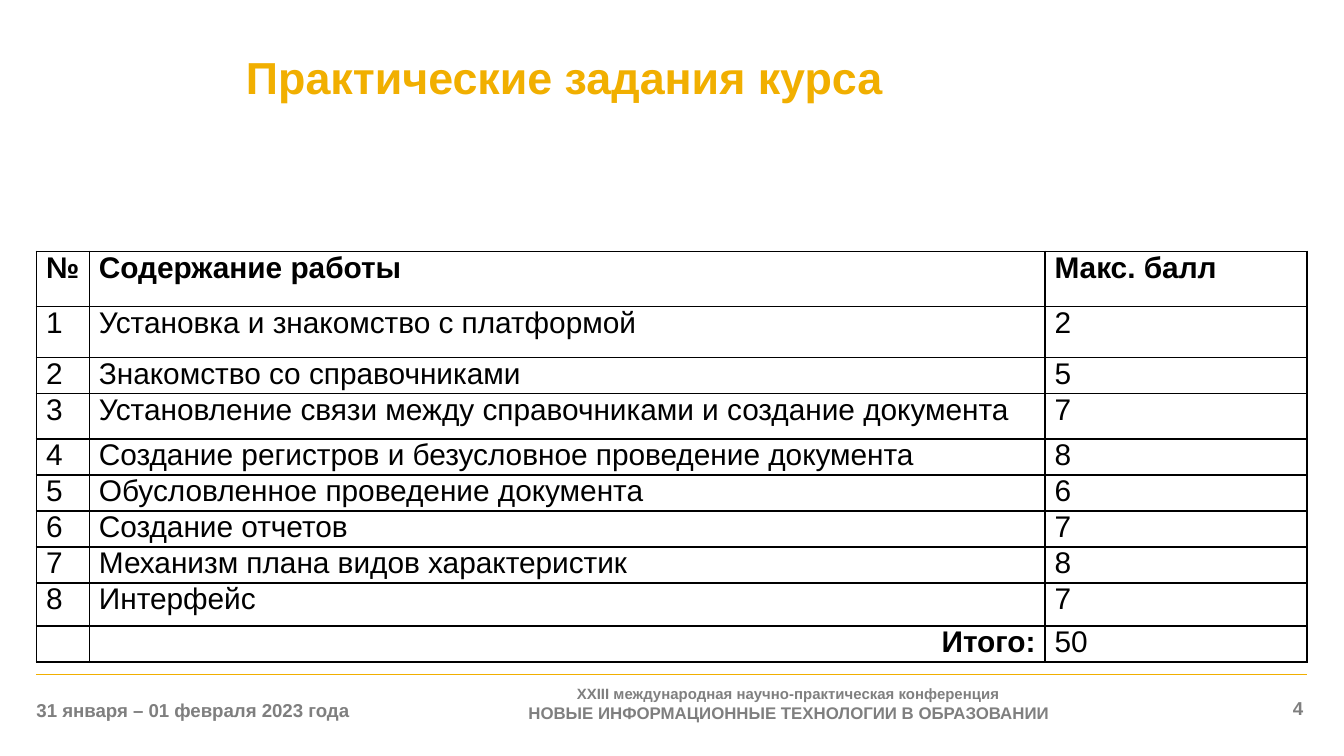
from dataclasses import dataclass

from lxml import etree
from pptx import Presentation
from pptx import util as u
from pptx.dml.color import RGBColor
from pptx.enum import shapes, text
from pptx.oxml import ns

ALIGN = text.PP_ALIGN
ANCHOR = text.MSO_ANCHOR


@dataclass(frozen=True)
class Theme:
    font: str = "Arial"
    gold: str = "F1AF00"
    gray: str = "7F7F7F"
    black: str = "000000"
    title: int = 24
    body: int = 16
    foot: int = 10
    event: int = 9
    small: int = 8
    pad: float = 0.18
    rule: float = 0.75
    border: int = 1


class Deck:
    def __init__(self, theme, width, height):
        self.theme = theme
        self.prs = Presentation()
        self.prs.slide_width = u.Cm(width)
        self.prs.slide_height = u.Cm(height)
        self.slide = self.prs.slides.add_slide(self.prs.slide_layouts[6])

    def run(self, para, words, size, color, bold=True):
        run = para.add_run()
        run.text = words
        font = run.font
        font.name, font.size, font.bold = self.theme.font, u.Pt(size), bold
        font.color.rgb = RGBColor.from_string(color)

    def label(self, box, lines, color, align=ALIGN.LEFT, anchor=ANCHOR.TOP, pad=0):
        """Add one paragraph; lines holds (words, size) pairs split by line breaks."""
        shape = self.slide.shapes.add_textbox(*map(u.Cm, box))
        frame = shape.text_frame
        frame.word_wrap = True
        frame.vertical_anchor = anchor
        frame.margin_left = frame.margin_right = u.Cm(pad)
        frame.margin_top = frame.margin_bottom = 0
        para = frame.paragraphs[0]
        para.alignment = align
        for i, (words, size) in enumerate(lines):
            if i:
                para.add_line_break()
            self.run(para, words, size, color)

    def line(self, start, end):
        ends = map(u.Cm, (*start, *end))
        rule = self.slide.shapes.add_connector(shapes.MSO_CONNECTOR.STRAIGHT, *ends)
        rule.line.color.rgb = RGBColor.from_string(self.theme.gold)
        rule.line.width = u.Pt(self.theme.rule)
        etree.SubElement(rule._element.spPr, ns.qn("a:effectLst"))

    def frame(self, cell):
        """Draw the four borders of a cell and leave it unfilled."""
        props = cell._tc.get_or_add_tcPr()
        for side in ("lnL", "lnR", "lnT", "lnB"):
            edge = etree.SubElement(props, ns.qn(f"a:{side}"))
            edge.set("w", str(u.Pt(self.theme.border)))
            fill = etree.SubElement(edge, ns.qn("a:solidFill"))
            etree.SubElement(fill, ns.qn("a:srgbClr")).set("val", self.theme.black)
        cell.fill.background()

    def cell(self, cell, words, align, bold):
        cell.margin_left = cell.margin_right = u.Cm(self.theme.pad)
        cell.margin_top = cell.margin_bottom = 0
        para = cell.text_frame.paragraphs[0]
        para.alignment = align
        if words:
            self.run(para, words, self.theme.body, self.theme.black, bold)
        else:
            end = etree.SubElement(para._p, ns.qn("a:endParaRPr"))
            end.set("sz", str(self.theme.body * 100))
        self.frame(cell)

    def table(self, left, top, widths, heights, rows):
        """Add a grid whose first row is a heading and last row a total."""
        box = map(u.Cm, (left, top, sum(widths), sum(heights)))
        grid = self.slide.shapes.add_table(len(rows), len(widths), *box).table
        grid.first_row = grid.horz_banding = False
        for col, width in zip(grid.columns, widths):
            col.width = u.Cm(width)
        for row, height in zip(grid.rows, heights):
            row.height = u.Cm(height)
        last = len(rows) - 1
        for r, row in enumerate(rows):
            for c, words in enumerate(row):
                total = (r, c) == (last, 1)
                align = ALIGN.RIGHT if total else ALIGN.JUSTIFY
                self.cell(grid.cell(r, c), words, align, r == 0 or total)


TASKS = [
    ("Установка и знакомство с платформой", 2),
    ("Знакомство со справочниками", 5),
    ("Установление связи между справочниками и создание документа", 7),
    ("Создание регистров и безусловное проведение документа", 8),
    ("Обусловленное проведение документа", 6),
    ("Создание отчетов", 7),
    ("Механизм плана видов характеристик", 8),
    ("Интерфейс", 7),
]


def main():
    look = Theme()
    deck = Deck(look, 25.4, 14.29)
    deck.line((0.69, 12.75), (24.71, 12.75))
    deck.label((4.5, 0.94, 19.2, 1.02), [("Практические задания курса", look.title)],
               look.gold, anchor=ANCHOR.MIDDLE, pad=0.15)
    deck.label((0.69, 13.21, 6, 0.43), [("31 января – 01 февраля 2023 года", look.foot)],
               look.gray, anchor=ANCHOR.MIDDLE)
    deck.label((6.7, 12.95, 16.4, 0.74),
               [("XXIII международная научно-практическая конференция", look.small),
                ("НОВЫЕ ИНФОРМАЦИОННЫЕ ТЕХНОЛОГИИ В ОБРАЗОВАНИИ", look.event)],
               look.gray, ALIGN.CENTER)
    deck.label((22.5, 13.18, 2.13, 0.43), [("4", look.foot)], look.gray, ALIGN.RIGHT)

    rows = [("№", "Содержание работы", "Макс. балл")]
    rows += [(str(i), task, str(mark)) for i, (task, mark) in enumerate(TASKS, 1)]
    rows.append(("", "Итого:", str(sum(mark for _, mark in TASKS))))
    tall = {0: 1.04, 1: 0.97, 3: 0.86, 8: 0.81}
    heights = [tall.get(r, 0.68) for r in range(len(rows))]
    deck.table(0.69, 4.75, (1, 18.06, 4.95), heights, rows)
    deck.prs.save("out.pptx")


if __name__ == "__main__":
    main()
